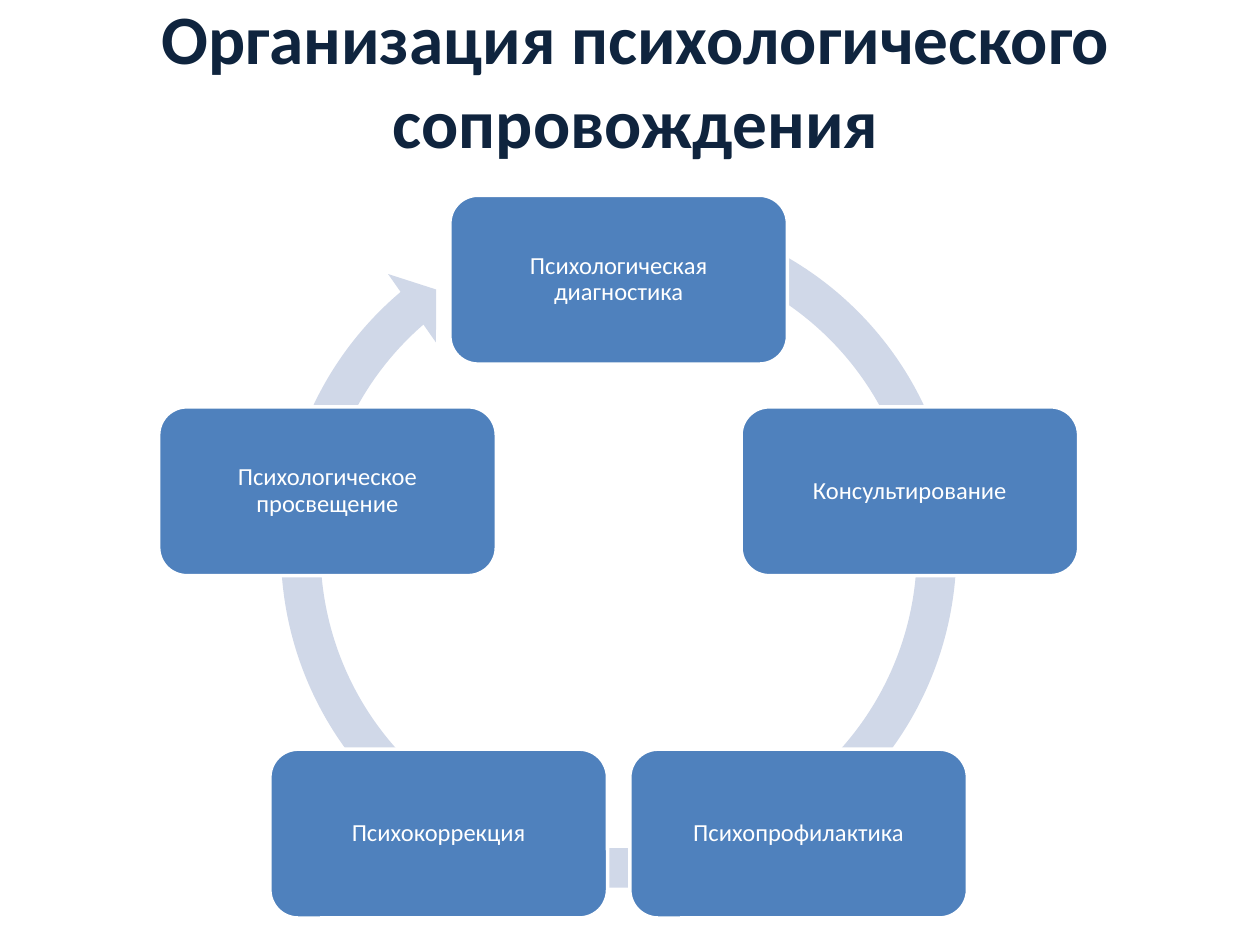
from math import cos, radians, sin

from pptx import Presentation
from pptx.dml.color import RGBColor
from pptx.enum.shapes import MSO_SHAPE
from pptx.enum.text import MSO_ANCHOR, MSO_AUTO_SIZE, PP_ALIGN
from pptx.util import Inches, Pt

ROUNDED, RING = MSO_SHAPE.ROUNDED_RECTANGLE, MSO_SHAPE.CIRCULAR_ARROW
MIDDLE, CENTER = MSO_ANCHOR.MIDDLE, PP_ALIGN.CENTER
NO_FIT = MSO_AUTO_SIZE.NONE
FONT = "Calibri"
COLORS = {name: RGBColor.from_string(code) for name, code in {
    "title": "0F243E", "stage": "4F81BD", "ring": "D0D8E8", "white": "FFFFFF",
}.items()}

STAGES = [
    "Психологическая диагностика",
    "Консультирование",
    "Психопрофилактика",
    "Психокоррекция",
    "Психологическое просвещение",
]


def write(frame, text, size, color, bold=False):
    frame.word_wrap = True
    frame.auto_size = NO_FIT
    frame.vertical_anchor = MIDDLE
    paragraph = frame.paragraphs[0]
    paragraph.alignment = CENTER
    run = paragraph.add_run()
    run.text = text
    run.font.name = FONT
    run.font.size = Pt(size)
    run.font.bold = bold
    run.font.color.rgb = COLORS[color]
    return paragraph


prs = Presentation()
prs.slide_width, prs.slide_height = Inches(10), Inches(7.5)
slide = prs.slides.add_slide(prs.slide_layouts[5])

# Title
title = slide.shapes.title
title.left, title.top = Inches(0.2), Inches(0)
title.width, title.height = Inches(9.69), Inches(1.25)
write(title.text_frame, "Организация психологического сопровождения",
      39.6, "title", bold=True)

# Ring arrow behind the stages
center_x, ring_top, ring_size = 4.91, 1.51, 5.71
ring = slide.shapes.add_shape(RING, Inches(center_x - ring_size / 2), Inches(ring_top),
                              Inches(ring_size), Inches(ring_size))
for index, value in enumerate((0.055, 3.307, 137.685, 173.905, 0.058)):
    ring.adjustments[index] = value
ring.shadow.inherit = False
ring.fill.solid()
ring.fill.fore_color.rgb = COLORS["ring"]
ring.line.fill.background()

# Stages, evenly spaced clockwise from the top
center_y, radius = 4.65, 2.43
stage_w, stage_h = 2.68, 1.34
for index, label in enumerate(STAGES):
    angle = radians(360 / len(STAGES) * index)
    left = center_x + radius * sin(angle) - stage_w / 2
    top = center_y - radius * cos(angle) - stage_h / 2
    stage = slide.shapes.add_shape(ROUNDED, Inches(left), Inches(top),
                                   Inches(stage_w), Inches(stage_h))
    stage.shadow.inherit = False
    stage.fill.solid()
    stage.fill.fore_color.rgb = COLORS["stage"]
    stage.line.color.rgb = COLORS["white"]
    stage.line.width = Pt(2)
    frame = stage.text_frame
    frame.margin_left = frame.margin_right = Inches(0.06)
    frame.margin_top = frame.margin_bottom = Inches(0.06)
    write(frame, label, 14, "white").line_spacing = 0.9

prs.save("out.pptx")
